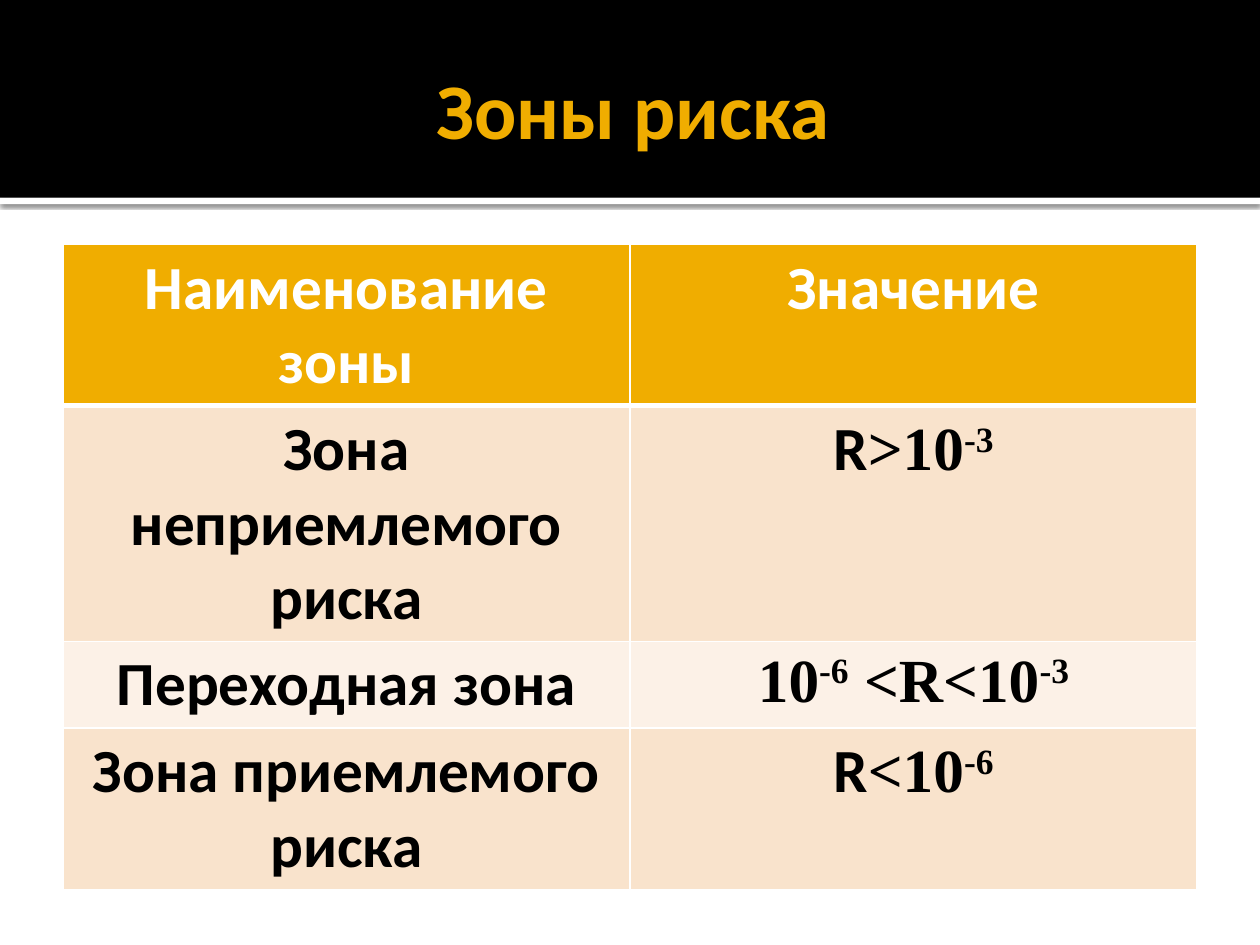
from typing import NamedTuple

from lxml import etree
from pptx import Presentation
from pptx.dml.color import RGBColor
from pptx.enum.shapes import MSO_SHAPE
from pptx.enum.text import MSO_ANCHOR, PP_ALIGN
from pptx.oxml import parse_xml
from pptx.oxml.ns import qn
from pptx.util import Inches, Pt

RECT = MSO_SHAPE.RECTANGLE
MIDDLE = MSO_ANCHOR.MIDDLE
CENTER = PP_ALIGN.CENTER
SANS = "Calibri"
SERIF = "Times New Roman"
AMBER, WHITE, BLACK = "F0AD00", "FFFFFF", "000000"
PEACH, CREAM = "F9E3CC", "FCF1E7"
NS = "http://schemas.openxmlformats.org/drawingml/2006/main"


class Run(NamedTuple):
    text: str
    font: str = SANS
    superscript: bool = False


class Row(NamedTuple):
    height: float
    fill: str
    color: str
    bottom: float
    cells: list[list[Run]]


def rgb(color: str) -> RGBColor:
    return RGBColor.from_string(color)


def power(base: str, exponent: str) -> list[Run]:
    return [Run(base, SERIF), Run(exponent, SERIF, True)]


def write(p, runs: list[Run], size: float, color: str) -> None:
    p.alignment = CENTER
    p.font.size = Pt(size)
    p.font.bold = True
    p.font.color.rgb = rgb(color)
    for run in runs:
        r = p.add_run()
        r.text = run.text
        r.font.name = run.font
        if run.superscript:
            r.font._element.set("baseline", "30000")


def add_band(s, top: float, height: float, color: str):
    sp = s.shapes.add_shape(RECT, 0, Inches(top), Inches(10), Inches(height))
    sp.shadow.inherit = False
    sp.fill.solid()
    sp.fill.fore_color.rgb = rgb(color)
    sp.line.fill.background()
    return sp


def add_shadow(sp) -> None:
    effects = sp._element.spPr.find(qn("a:effectLst"))
    effects.append(parse_xml(
        f'<a:outerShdw xmlns:a="{NS}" blurRad="{Pt(2.5)}" dist="{Pt(0.8)}" '
        f'dir="5400000" rotWithShape="0"><a:srgbClr val="{BLACK}">'
        '<a:alpha val="60000"/></a:srgbClr></a:outerShdw>'))


def set_borders(cell, top: float, bottom: float) -> None:
    tcPr = cell._tc.get_or_add_tcPr()
    for side, width in (("L", 1), ("R", 1), ("T", top), ("B", bottom)):
        ln = etree.SubElement(tcPr, qn(f"a:ln{side}"), w=str(Pt(width)))
        fill = etree.SubElement(ln, qn("a:solidFill"))
        etree.SubElement(fill, qn("a:srgbClr"), val=WHITE)


def add_title(s, text: str) -> None:
    sp = s.shapes.add_textbox(Inches(0.5), Inches(0.17), Inches(9), Inches(1.37))
    tf = sp.text_frame
    tf.word_wrap = True
    tf.vertical_anchor = MIDDLE
    tf.margin_right = Inches(0.05)
    write(tf.paragraphs[0], [Run(text)], 45, AMBER)


def add_risk_table(s, rows: list[Row]) -> None:
    height = sum(row.height for row in rows)
    table = s.shapes.add_table(len(rows), 2, Inches(0.5), Inches(1.94),
                               Inches(9), Inches(height)).table
    top = 1
    for i, row in enumerate(rows):
        table.rows[i].height = Inches(row.height)
        for j, runs in enumerate(row.cells):
            cell = table.cell(i, j)
            set_borders(cell, top, row.bottom)
            cell.fill.solid()
            cell.fill.fore_color.rgb = rgb(row.fill)
            write(cell.text_frame.paragraphs[0], runs, 35, row.color)
        top = row.bottom


ROWS = [
    Row(1.28, AMBER, WHITE, 3, [[Run("Наименование зоны")], [Run("Значение")]]),
    Row(1.87, PEACH, BLACK, 1, [[Run("Зона неприемлемого риска")],
                                [Run("R"), *power(">10", "-3")]]),
    Row(0.69, CREAM, BLACK, 1, [[Run("Переходная зона")],
                                power("10", "-6") + power(" <R<10", "-3")]),
    Row(1.28, PEACH, BLACK, 1, [[Run("Зона приемлемого риска")],
                                [Run("R"), *power("<10", "-6")]]),
]


def main() -> None:
    prs = Presentation()
    prs.slide_width, prs.slide_height = Inches(10), Inches(7.5)
    s = prs.slides.add_slide(prs.slide_layouts[6])
    add_shadow(add_band(s, 1.57, 0.05, WHITE))
    add_band(s, 0, 1.57, BLACK)
    add_title(s, "Зоны риска")
    add_risk_table(s, ROWS)
    prs.save("out.pptx")


if __name__ == "__main__":
    main()
